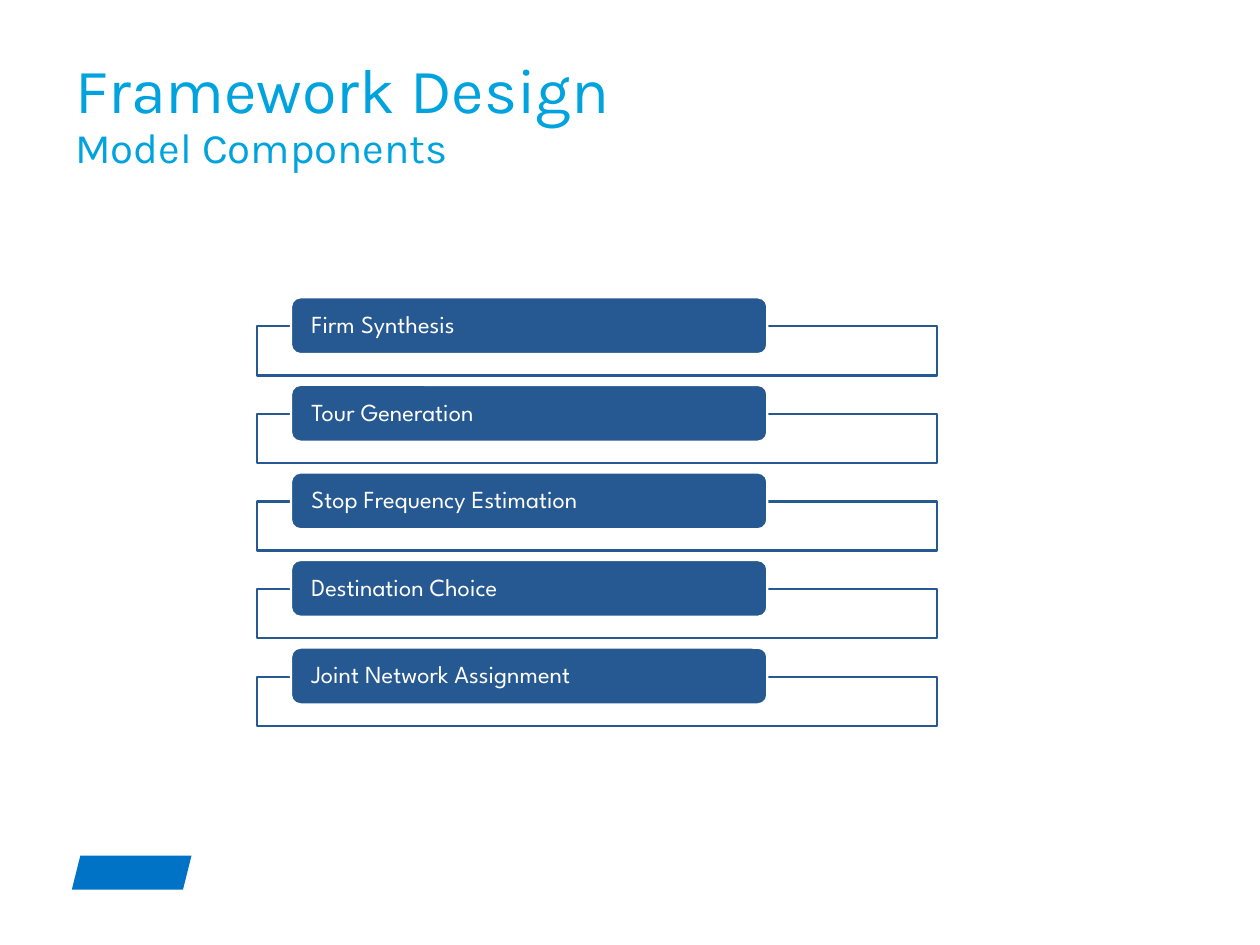
from pptx import Presentation
from pptx.dml.color import RGBColor
from pptx.enum import shapes, text
from pptx.util import Inches, Pt

SKY = RGBColor(0x00, 0xA3, 0xDD)
NAVY = RGBColor(0x26, 0x59, 0x91)
LOGO_BLUE = RGBColor(0x00, 0x73, 0xC6)
WHITE = RGBColor(0xFF, 0xFF, 0xFF)

COMPONENTS = [
    "Firm Synthesis",
    "Tour Generation",
    "Stop Frequency Estimation",
    "Destination Choice",
    "Joint Network Assignment",
]


def add_box(slide, kind, left, top, width, height, fill=None, line=None):
    box = slide.shapes.add_shape(
        kind, Inches(left), Inches(top), Inches(width), Inches(height))
    box.shadow.inherit = False
    if fill is None:
        box.fill.background()
    else:
        box.fill.solid()
        box.fill.fore_color.rgb = fill
    if line is None:
        box.line.fill.background()
    else:
        box.line.color.rgb = line
        box.line.width = Pt(1.25)
    return box


def add_title(slide, left, top, width, height):
    title = slide.shapes.add_textbox(
        Inches(left), Inches(top), Inches(width), Inches(height))
    frame = title.text_frame
    frame.word_wrap = True
    frame.vertical_anchor = text.MSO_ANCHOR.BOTTOM
    heading = frame.paragraphs[0]
    heading.line_spacing = 0.9
    heading.font.name = "Karla"
    heading.font.color.rgb = SKY
    main = heading.add_run()
    main.text = "Framework Design"
    main.font.size = Pt(36)
    heading.add_line_break()
    subtitle = heading.add_run()
    subtitle.text = "Model Components"
    subtitle.font.size = Pt(24)


def add_component(slide, name, left, top, width):
    """Draw a filled label over the top edge of an outlined frame."""
    add_box(slide, shapes.MSO_SHAPE.RECTANGLE,
            left, top + 0.23, width, 0.39, line=NAVY)
    label = add_box(slide, shapes.MSO_SHAPE.ROUNDED_RECTANGLE,
                    left + width * 0.05, top, width * 0.7, 0.45,
                    fill=NAVY, line=WHITE)
    frame = label.text_frame
    frame.word_wrap = True
    frame.vertical_anchor = text.MSO_ANCHOR.MIDDLE
    frame.margin_left = frame.margin_right = Inches(0.14)
    frame.margin_top = frame.margin_bottom = 0
    caption = frame.paragraphs[0]
    caption.text = name
    caption.alignment = text.PP_ALIGN.LEFT
    caption.line_spacing = 0.9
    caption.font.name = "League Spartan"
    caption.font.size = Pt(14)
    caption.font.color.rgb = WHITE


def add_component_list(slide, left, top, width, pitch):
    for row, name in enumerate(COMPONENTS):
        add_component(slide, name, left, top + row * pitch, width)


def main():
    deck = Presentation()
    deck.slide_width, deck.slide_height = Inches(10), Inches(7.5)
    slide = deck.slides.add_slide(deck.slide_layouts[6])
    add_box(slide, shapes.MSO_SHAPE.PARALLELOGRAM,
            0.57, 6.79, 0.95, 0.27, fill=LOGO_BLUE)
    add_title(slide, 0.5, 0.4, 9, 1.02)
    add_component_list(slide, 2.04, 2.36, 5.4, pitch=0.695)
    deck.save("out.pptx")


if __name__ == "__main__":
    main()
